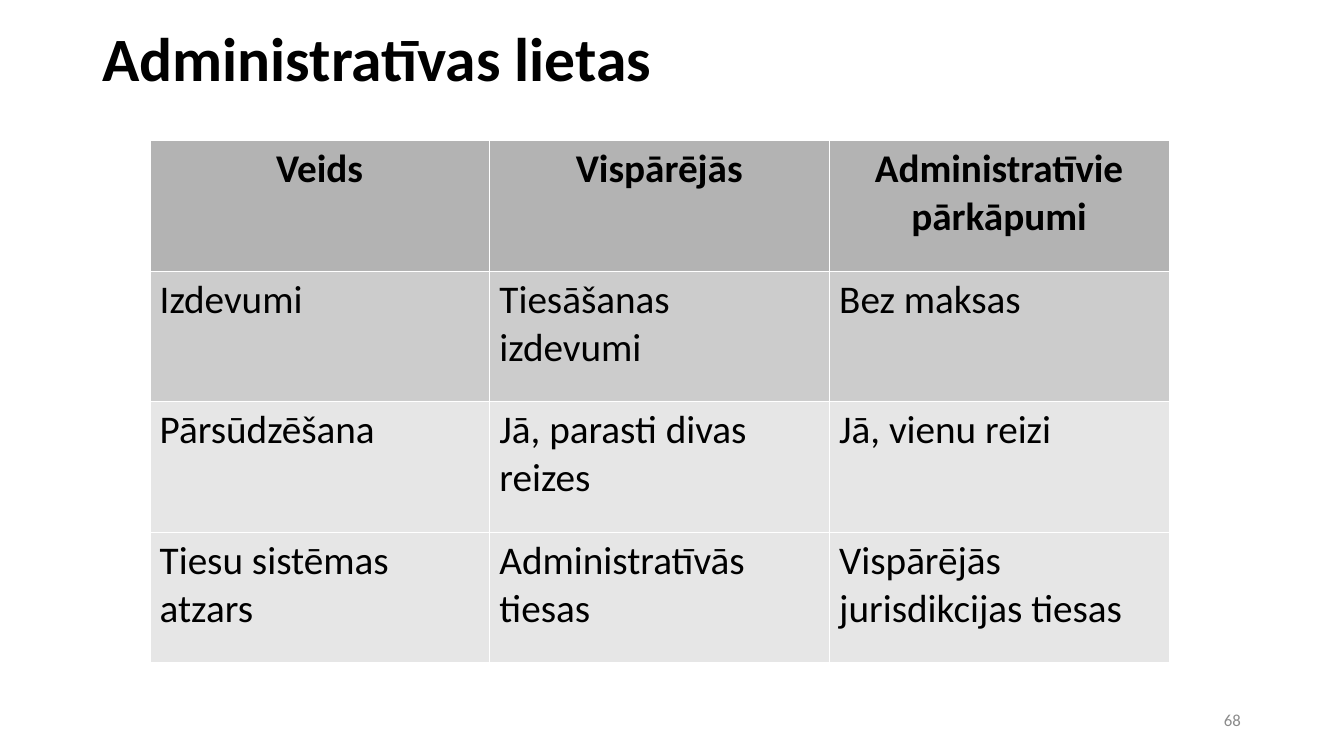
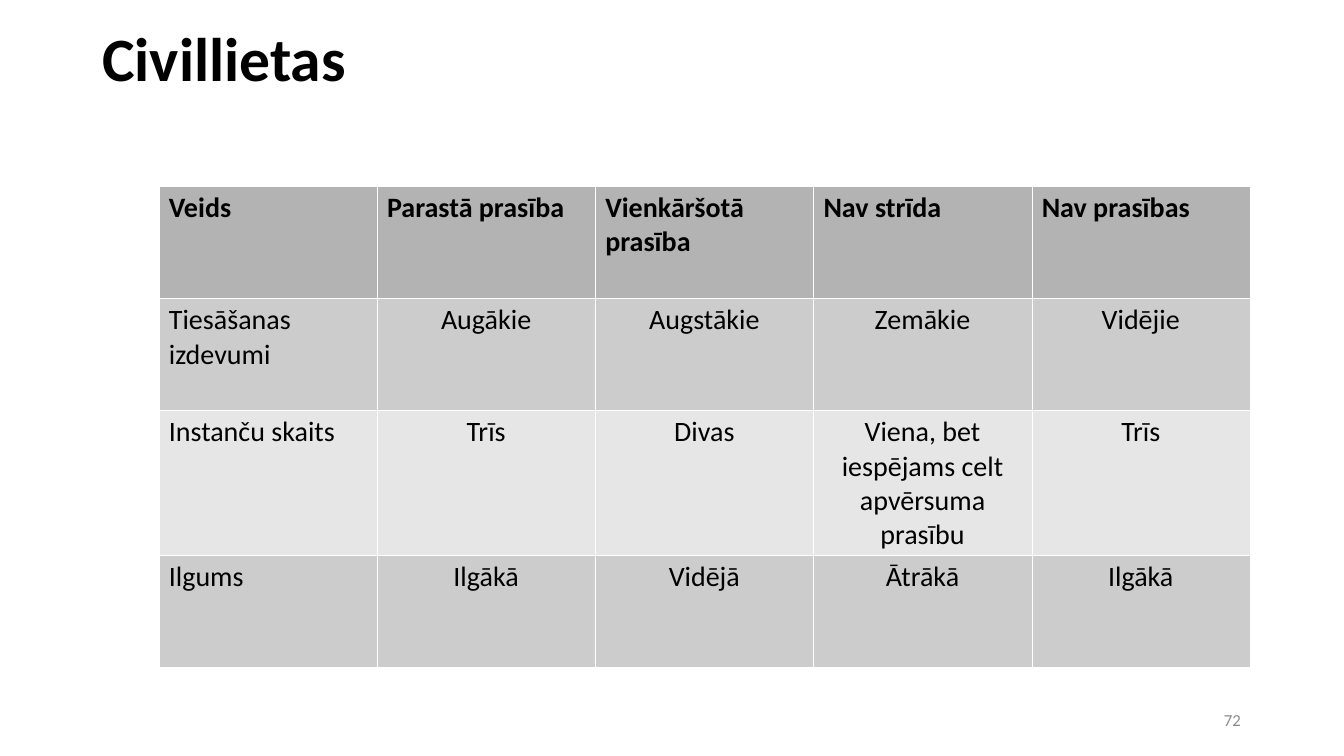
from pptx import Presentation
from pptx.dml.color import RGBColor
from pptx.enum import text
from pptx.oxml import parse_xml
from pptx.oxml.ns import nsdecls
from pptx.util import Pt

FONT = "Calibri"
BLACK = RGBColor(0x00, 0x00, 0x00)
GREY = RGBColor(0x8B, 0x8B, 0x8B)
DARK = RGBColor(0xB3, 0xB3, 0xB3)
MID = RGBColor(0xCC, 0xCC, 0xCC)
PALE = RGBColor(0xE6, 0xE6, 0xE6)
WHITE = RGBColor(0xFF, 0xFF, 0xFF)
LEFT, MIDDLE, RIGHT = (text.PP_ALIGN.LEFT, text.PP_ALIGN.CENTER,
                       text.PP_ALIGN.RIGHT)


def write(frame, words, size=20, color=BLACK, bold=False, align=LEFT,
          space=None):
    """Fill a text frame, one paragraph per line of words."""
    frame.word_wrap = True
    for i, line in enumerate(words.split("\n")):
        para = frame.add_paragraph() if i else frame.paragraphs[0]
        para.alignment = align
        if space:
            para.line_spacing = space
        run = para.add_run()
        run.text = line
        font = run.font
        font.name, font.size, font.bold = FONT, Pt(size), bold
        font.color.rgb = color


def edge(cell, color=WHITE, width=0.06):
    """Draw a thin line on all four sides; call before setting the fill."""
    props = cell._tc.get_or_add_tcPr()
    for side in ("lnL", "lnR", "lnT", "lnB"):
        props.append(parse_xml(
            f'<a:{side} {nsdecls("a")} w="{Pt(width)}"><a:solidFill>'
            f'<a:srgbClr val="{color}"/></a:solidFill></a:{side}>'))


class Deck:
    def __init__(self):
        self.prs = Presentation()
        self.prs.slide_width, self.prs.slide_height = Pt(960), Pt(540)
        self.slide = None

    def box(self, x, y, w, h, words, **style):
        shape = self.slide.shapes.add_textbox(Pt(x), Pt(y), Pt(w), Pt(h))
        shape.text_frame.vertical_anchor = text.MSO_ANCHOR.MIDDLE
        write(shape.text_frame, words, **style)

    def page(self, title, number):
        """Start a slide with its title and page number."""
        self.slide = self.prs.slides.add_slide(self.prs.slide_layouts[6])
        self.box(66, -8, 827.5, 103.5, title, size=44, bold=True, space=0.9)
        self.box(678, 500.5, 215.5, 28, number, size=12, color=GREY,
                 align=RIGHT)

    def table(self, x, y, wide, high, rows, fills, size, head=LEFT,
              body=LEFT):
        """Add a grid of equal cells; head and body align the text."""
        cols = len(rows[0])
        grid = self.slide.shapes.add_table(
            len(rows), cols, Pt(x), Pt(y), Pt(wide * cols),
            Pt(high * len(rows))).table
        for col in grid.columns:
            col.width = Pt(wide)
        for r, (row, fill) in enumerate(zip(rows, fills)):
            grid.rows[r].height = Pt(high)
            for c, words in enumerate(row):
                cell = grid.cell(r, c)
                edge(cell)
                cell.fill.solid()
                cell.fill.fore_color.rgb = fill
                align = head if r == 0 else body if c else LEFT
                write(cell.text_frame, words, size=size, bold=r == 0,
                      align=align)


def main():
    deck = Deck()

    # Administrative cases
    deck.page("Administratīvas lietas", "68")
    deck.table(106.9, 100.4, 242.7, 93.2, [
        ("Veids", "Vispārējās", "Administratīvie\npārkāpumi"),
        ("Izdevumi", "Tiesāšanas izdevumi", "Bez maksas"),
        ("Pārsūdzēšana", "Jā, parasti divas reizes", "Jā, vienu reizi"),
        ("Tiesu sistēmas atzars", "Administratīvās tiesas",
         "Vispārējās jurisdikcijas tiesas"),
    ], (DARK, MID, PALE, PALE), size=28, head=MIDDLE)

    # Civil cases
    deck.page("Civillietas", "72")
    deck.table(113.4, 132.8, 155.9, 80.1, [
        ("Veids", "Parastā prasība", "Vienkāršotā\nprasība", "Nav strīda",
         "Nav prasības"),
        ("Tiesāšanas\nizdevumi", "Augākie", "Augstākie", "Zemākie",
         "Vidējie"),
        ("Instanču skaits", "Trīs", "Divas",
         "Viena, bet iespējams celt apvērsuma prasību", "Trīs"),
        ("Ilgums", "Ilgākā", "Vidējā", "Ātrākā", "Ilgākā"),
    ], (DARK, MID, PALE, MID), size=20, body=MIDDLE)

    deck.prs.save("out.pptx")


if __name__ == "__main__":
    main()
